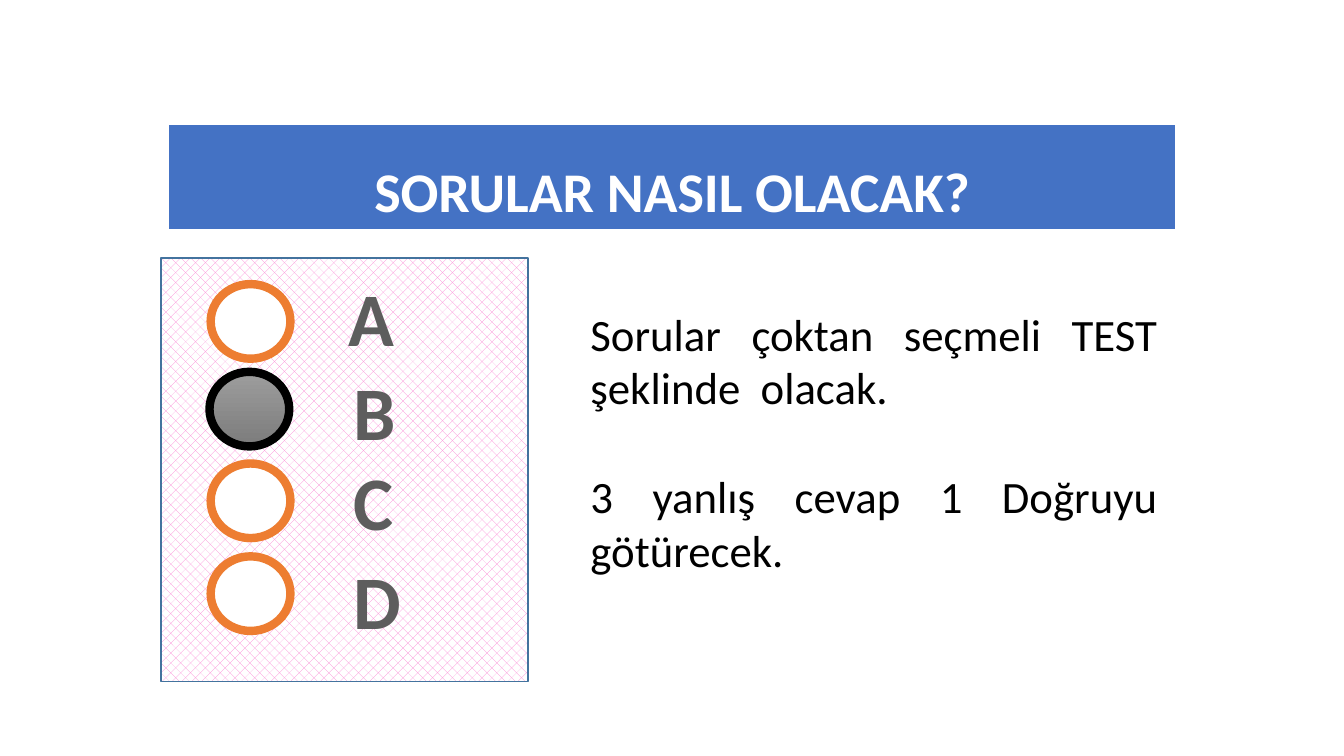
"""Build a slide explaining the multiple-choice question format."""
from dataclasses import dataclass

import pptx
import pptx.dml.color
import pptx.enum.dml
import pptx.enum.shapes
import pptx.enum.text
import pptx.util

Cm = pptx.util.Cm
Pt = pptx.util.Pt
Align = pptx.enum.text.PP_ALIGN
Anchor = pptx.enum.text.MSO_ANCHOR
Preset = pptx.enum.shapes.MSO_SHAPE

ORANGE = "ED7D31"
WHITE = "FFFFFF"
BLACK = "000000"
LETTER_GREY = "5D5D5D"
BUBBLE_WIDTH, BUBBLE_HEIGHT = 2.01, 1.88
LETTER_HEIGHT = 2.57


@dataclass(frozen=True)
class Frame:
    left: float
    top: float
    width: float
    height: float

    def lengths(self) -> list[pptx.util.Length]:
        return [Cm(value) for value in (self.left, self.top, self.width, self.height)]


@dataclass(frozen=True)
class Option:
    letter: str
    bubble_left: float
    bubble_top: float
    letter_left: float
    letter_top: float
    letter_width: float
    marked: bool = False


OPTIONS = [
    Option("A", 5.31, 7.16, 8.53, 6.71, 1.35),
    Option("B", 5.28, 9.37, 8.66, 9.07, 1.24, marked=True),
    Option("C", 5.31, 11.68, 8.66, 11.35, 1.24),
    Option("D", 5.31, 14.02, 8.66, 13.84, 1.37),
]

RULES = [
    "Sorular çoktan seçmeli TEST şeklinde  olacak.",
    "3 yanlış cevap 1 Doğruyu götürecek.",
]


def colour(value: str) -> pptx.dml.color.RGBColor:
    return pptx.dml.color.RGBColor.from_string(value)


def apply(target, formats: dict) -> None:
    for name, value in formats.items():
        setattr(target, name, value)


def add_shape(page, preset, frame: Frame, line: str, width: float):
    shape = page.shapes.add_shape(preset, *frame.lengths())
    shape.shadow.inherit = False
    shape.line.color.rgb = colour(line)
    shape.line.width = Pt(width)
    return shape


def fill_solid(shape, value: str) -> None:
    shape.fill.solid()
    shape.fill.fore_color.rgb = colour(value)


def write(box, lines: list[str], font: dict, ink: str, layout: dict, gap: float = 0,
          frame_format: dict | None = None) -> None:
    text = box.text_frame
    apply(text, {"word_wrap": True, **(frame_format or {})})
    for index, line in enumerate(lines):
        para = text.add_paragraph() if index else text.paragraphs[0]
        apply(para, layout)
        if index:
            para.space_before = Pt(gap)
        span = para.add_run()
        span.text = line
        apply(span.font, {"name": "Calibri", **font})
        span.font.color.rgb = colour(ink)


def add_title(page) -> None:
    banner = add_shape(page, Preset.RECTANGLE, Frame(4.24, 3.12, 25.4, 2.67), WHITE, 1.5)
    fill_solid(banner, "4472C4")
    write(banner, ["SORULAR NASIL OLACAK?"], {"size": Pt(40), "bold": True}, WHITE,
          {"alignment": Align.CENTER, "line_spacing": 0.9},
          frame_format={"vertical_anchor": Anchor.BOTTOM})


def add_panel(page) -> None:
    panel = add_shape(page, Preset.RECTANGLE, Frame(4.06, 6.5, 9.25, 10.67), "43739E", 1)
    panel.fill.patterned()
    panel.fill.pattern = pptx.enum.dml.MSO_PATTERN.PERCENT_30
    panel.fill.fore_color.rgb = colour("FB85D4")
    panel.fill.back_color.rgb = colour(WHITE)


def add_rules(page) -> None:
    box = page.shapes.add_textbox(*Frame(14.55, 7.54, 14.96, 8.56).lengths())
    margins = {"margin_left": Cm(0.33), "margin_right": Cm(0.33),
               "margin_top": Cm(0.18), "margin_bottom": Cm(0.18)}
    write(box, RULES, {"size": Pt(32)}, BLACK, {"alignment": Align.JUSTIFY}, 39, margins)


def add_option(page, option: Option) -> None:
    frame = Frame(option.bubble_left, option.bubble_top, BUBBLE_WIDTH, BUBBLE_HEIGHT)
    bubble = add_shape(page, Preset.OVAL, frame, BLACK if option.marked else ORANGE, 6)
    if option.marked:
        bubble.fill.gradient()
        bubble.fill.gradient_angle = 270
        for stop, value in zip(bubble.fill.gradient_stops, ("9D9D9D", "7C7C7C")):
            stop.color.rgb = colour(value)
    else:
        fill_solid(bubble, WHITE)
    frame = Frame(option.letter_left, option.letter_top, option.letter_width, LETTER_HEIGHT)
    box = page.shapes.add_textbox(*frame.lengths())
    write(box, [option.letter], {"size": Pt(54), "bold": True}, LETTER_GREY,
          {"alignment": Align.LEFT})


def main() -> None:
    deck = pptx.Presentation()
    apply(deck, {"slide_width": Cm(33.87), "slide_height": Cm(19.05)})
    page = deck.slides.add_slide(deck.slide_layouts[6])
    add_title(page)
    add_panel(page)
    add_rules(page)
    for option in OPTIONS:
        add_option(page, option)
    deck.save("out.pptx")


if __name__ == "__main__":
    main()
